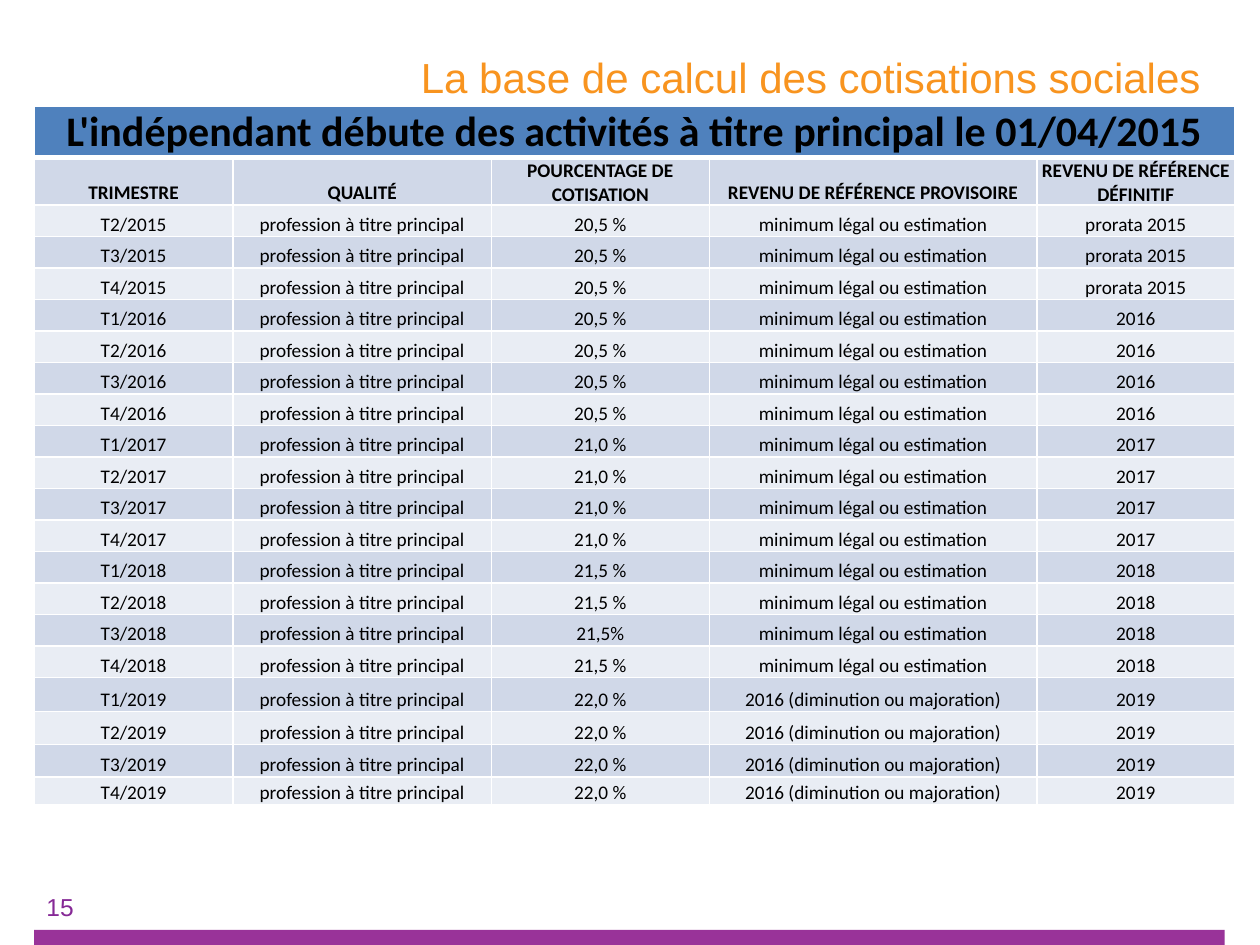
"""Builds the slide on the calculation base of social contributions."""
from lxml import etree
from pptx import Presentation
from pptx.dml.color import RGBColor
from pptx.enum.shapes import MSO_SHAPE
from pptx.enum.text import MSO_ANCHOR, PP_ALIGN
from pptx.oxml.ns import qn
from pptx.util import Inches, Pt

RECTANGLE = MSO_SHAPE.RECTANGLE
TOP, MIDDLE, BOTTOM = MSO_ANCHOR.TOP, MSO_ANCHOR.MIDDLE, MSO_ANCHOR.BOTTOM
LEFT, CENTER, RIGHT = PP_ALIGN.LEFT, PP_ALIGN.CENTER, PP_ALIGN.RIGHT

COLORS = {
    "purple": "993399", "number": "862996", "orange": "F8941F", "black": "000000",
    "white": "FFFFFF", "banner": "4F81BD", "dark band": "D0D8E8", "light band": "E9EDF4",
}
COLUMN_WIDTHS = [1.58, 2.05, 1.73, 2.6, 1.57]
ROW_HEIGHTS = [0.39, 0.22] + [0.25] * 15 + [0.27, 0.26, 0.26, 0.22]
BANNER = "L'indépendant débute des activités à titre principal le 01/04/2015"
HEADINGS = ["TRIMESTRE", "QUALITÉ", "POURCENTAGE DE COTISATION",
            "REVENU DE RÉFÉRENCE PROVISOIRE", "REVENU DE RÉFÉRENCE DÉFINITIF"]
MINIMUM = "minimum légal ou estimation"
YEARS = [
    (2015, "20,5 %", MINIMUM, "prorata 2015"),
    (2016, "20,5 %", MINIMUM, "2016"),
    (2017, "21,0 %", MINIMUM, "2017"),
    (2018, "21,5 %", MINIMUM, "2018"),
    (2019, "22,0 %", "2016 (diminution ou majoration)", "2019"),
]
RATE_EXCEPTIONS = {"T3/2018": "21,5%"}


def color(name):
    """Return the named colour."""
    return RGBColor.from_string(COLORS[name])


def write(frame, text, font, size, ink, align, bold=False):
    """Write one paragraph into a text frame."""
    paragraph = frame.paragraphs[0]
    paragraph.text = text
    paragraph.alignment = align
    paragraph.font.name = font
    paragraph.font.size = Pt(size)
    paragraph.font.bold = bold
    paragraph.font.color.rgb = color(ink)


def add_text(page, place, text, size, ink, align, anchor):
    """Add a wrapped Arial text box."""
    frame = page.shapes.add_textbox(*map(Inches, place)).text_frame
    frame.word_wrap = True
    frame.vertical_anchor = anchor
    write(frame, text, "Arial", size, ink, align)


def add_bar(page, place):
    """Add the plain footer bar."""
    bar = page.shapes.add_shape(RECTANGLE, *map(Inches, place))
    bar.shadow.inherit = False
    bar.fill.solid()
    bar.fill.fore_color.rgb = color("purple")
    bar.line.fill.background()


def add_borders(cell, top, bottom):
    """Draw white cell borders, with the given top and bottom widths."""
    properties = cell._tc.get_or_add_tcPr()
    for side, width in (("L", 1), ("R", 1), ("T", top), ("B", bottom)):
        line = etree.SubElement(properties, qn(f"a:ln{side}"), w=str(Pt(width)))
        fill = etree.SubElement(line, qn("a:solidFill"))
        etree.SubElement(fill, qn("a:srgbClr"), val=COLORS["white"])


def fill_cell(cell, text, row_index):
    """Style and fill a cell according to its row."""
    add_borders(cell, 3 if row_index == 1 else 1, 3 if row_index == 0 else 1)
    cell.margin_left = cell.margin_right = cell.margin_top = Inches(0.01)
    cell.margin_bottom = 0
    cell.vertical_anchor = BOTTOM
    band = "dark band" if row_index % 2 else "light band"
    cell.fill.solid()
    cell.fill.fore_color.rgb = color("banner" if row_index == 0 else band)
    size = 24 if row_index == 0 else 11
    write(cell.text_frame, text, "Calibri", size, "black", CENTER, row_index < 2)


def quarter_rows():
    """List the table rows, one per quarter from T2/2015 to T4/2019."""
    rows = []
    for year, rate, provisional, final in YEARS:
        for quarter in range(2 if year == 2015 else 1, 5):
            label = f"T{quarter}/{year}"
            rows.append([label, "profession à titre principal",
                         RATE_EXCEPTIONS.get(label, rate), provisional, final])
    return rows


def add_contribution_table(page, place):
    """Add the table of quarterly contributions."""
    contents = [[BANNER, "", "", "", ""], HEADINGS] + quarter_rows()
    table = page.shapes.add_table(
        len(contents), len(HEADINGS), *map(Inches, place)).table
    for column, width in zip(table.columns, COLUMN_WIDTHS):
        column.width = Inches(width)
    for row, height in zip(table.rows, ROW_HEIGHTS):
        row.height = Inches(height)
    table.cell(0, 0).merge(table.cell(0, len(HEADINGS) - 1))
    for row_index, texts in enumerate(contents):
        for column_index, text in enumerate(texts):
            fill_cell(table.cell(row_index, column_index), text, row_index)


def main():
    """Build and save the deck."""
    deck = Presentation()
    deck.slide_width, deck.slide_height = Inches(10), Inches(7.5)
    page = deck.slides.add_slide(deck.slide_layouts[6])
    add_bar(page, (0.27, 7.38, 9.45, 0.12))
    add_text(page, (2.29, 0, 7.43, 1.22), "La base de calcul des cotisations sociales ",
             24, "orange", RIGHT, MIDDLE)
    add_contribution_table(page, (0.27, 0.84, 9.53, 5.53))
    add_text(page, (0.27, 7.03, 2.01, 0.5), "15", 14, "number", LEFT, TOP)
    deck.save("out.pptx")


if __name__ == "__main__":
    main()
